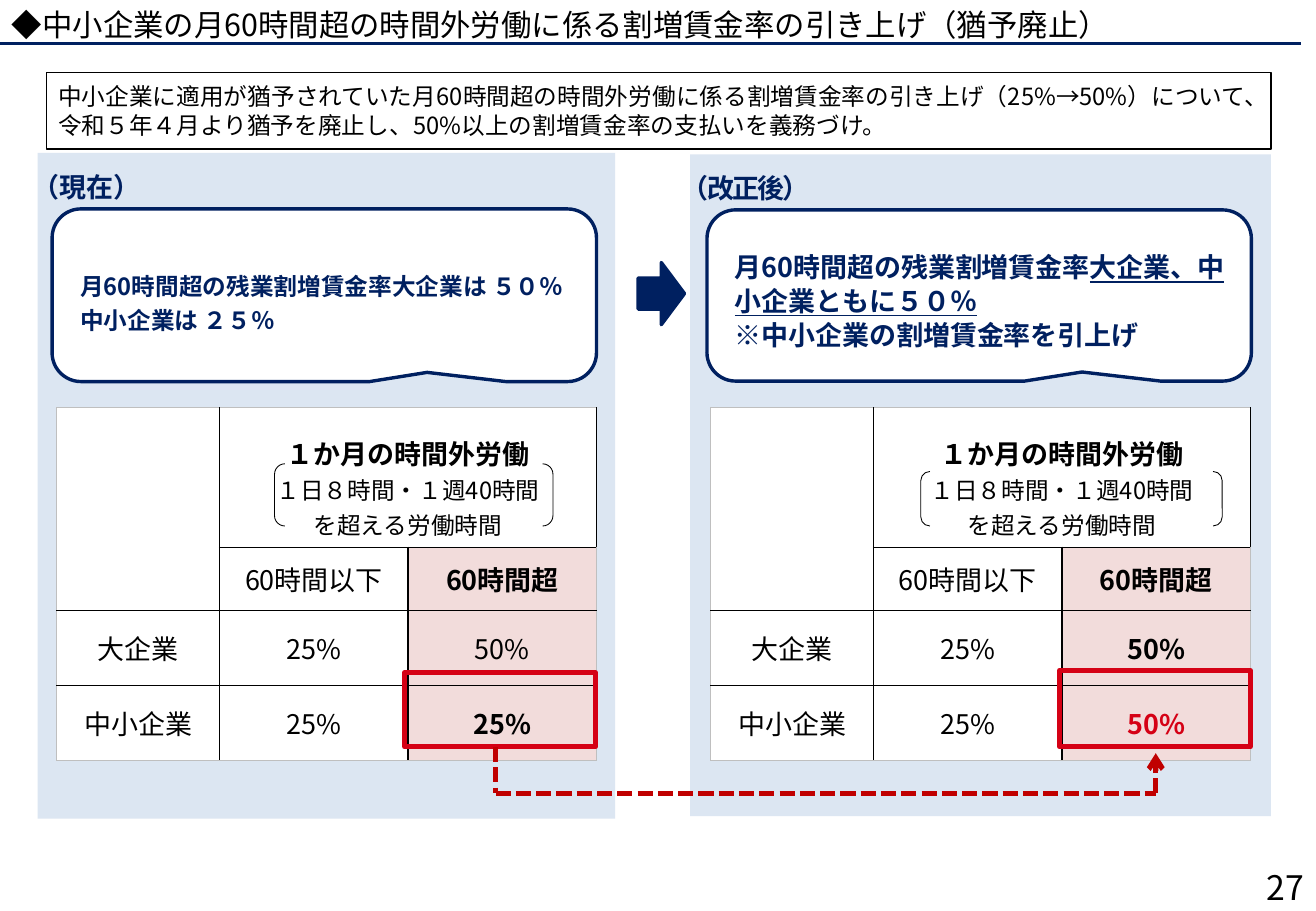
from lxml.etree import SubElement
from pptx import Presentation
from pptx.dml.color import RGBColor
from pptx.enum.dml import MSO_LINE
from pptx.enum.shapes import MSO_CONNECTOR, MSO_SHAPE
from pptx.enum.text import MSO_ANCHOR, PP_ALIGN
from pptx.oxml.ns import qn
from pptx.util import Cm, Pt

FONT = "Noto Sans CJK JP"
NAVY, BLACK, WHITE = "002060", "000000", "FFFFFF"
PANEL, PINK, RED, DARK_RED, GREY = "DCE6F2", "F2DCDB", "D50115", "C00000", "BFBFBF"


def color(value):
    return RGBColor.from_string(value)


def add_text(paragraph, text, size=16, hue=BLACK, bold=False, underline=False, spacing=None):
    run = paragraph.add_run()
    run.text = text
    font = run.font
    font.name, font.size, font.bold, font.underline = FONT, Pt(size), bold, underline
    font.color.rgb = color(hue)
    SubElement(run._r.get_or_add_rPr(), qn("a:ea"), typeface=FONT)
    if spacing is not None:
        run._r.get_or_add_rPr().set("spc", str(spacing))


def fill_frame(frame, lines, align=PP_ALIGN.LEFT, line_spacing=None, anchor=MSO_ANCHOR.TOP,
               insets=(0.25, 0.13, 0.25, 0.13), wrap=True, **style):
    """Each line is a list of (text, format) runs."""
    frame.word_wrap = wrap
    frame.vertical_anchor = anchor
    (frame.margin_left, frame.margin_top,
     frame.margin_right, frame.margin_bottom) = map(Cm, insets)
    for index, line in enumerate(lines):
        paragraph = frame.paragraphs[0] if index == 0 else frame.add_paragraph()
        paragraph.alignment = align
        paragraph.line_spacing = line_spacing
        for text, extra in line:
            add_text(paragraph, text, **{**style, **extra})


class SlideBuilder:
    def __init__(self, slide):
        self.slide = slide
        self.shapes = slide.shapes

    def shape(self, kind, box, fill=None, line=None, width=1, adjustments=()):
        shape = self.shapes.add_shape(kind, *map(Cm, box))
        shape.shadow.inherit = False
        for index, value in enumerate(adjustments):
            shape.adjustments[index] = value
        if fill:
            shape.fill.solid()
            shape.fill.fore_color.rgb = color(fill)
        else:
            shape.fill.background()
        if line:
            shape.line.color.rgb = color(line)
            shape.line.width = Pt(width)
        else:
            shape.line.fill.background()
        return shape

    def text(self, box, lines, **style):
        fill_frame(self.shapes.add_textbox(*map(Cm, box)).text_frame, lines, **style)

    def callout(self, box, lines, **style):
        shape = self.shape(MSO_SHAPE.ROUNDED_RECTANGULAR_CALLOUT, box, WHITE, NAVY, 2,
                           (0.189, 0.447, 0.167))
        fill_frame(shape.text_frame, lines, line_spacing=Pt(20), anchor=MSO_ANCHOR.MIDDLE,
                   insets=(0.41, 0.2, 0.25, 0), hue=NAVY, bold=True, **style)

    def line(self, start, end, hue, width, dashed=False, arrow=False):
        connector = self.shapes.add_connector(MSO_CONNECTOR.STRAIGHT, *map(Cm, start + end))
        connector.line.color.rgb = color(hue)
        connector.line.width = Pt(width)
        if dashed:
            connector.line.dash_style = MSO_LINE.SQUARE_DOT
        if arrow:
            SubElement(connector.line._get_or_add_ln(), qn("a:tailEnd"), type="arrow")
        SubElement(connector._element.spPr, qn("a:effectLst"))

    def border(self, cell, row, column):
        edges = {"lnL": column == 0, "lnR": column == 2, "lnT": row == 0, "lnB": row == 3}
        for tag, outer in edges.items():
            line = SubElement(cell._tc.get_or_add_tcPr(), qn("a:" + tag),
                              w=str(Pt(0.75 if outer else 1)))
            fill = SubElement(line, qn("a:solidFill"))
            SubElement(fill, qn("a:srgbClr"), val=GREY if outer else BLACK)

    def rate_table(self, left, top, rows):
        widths, heights = (3.4, 3.94, 3.94), (2.64, 1.32, 1.57, 1.57)
        table = self.shapes.add_table(4, 3, Cm(left), Cm(top), Cm(sum(widths)),
                                      Cm(sum(heights))).table
        table.first_row = table.horz_banding = False
        for column, width in zip(table.columns, widths):
            column.width = Cm(width)
        for row, height in zip(table.rows, heights):
            row.height = Cm(height)
        table.cell(0, 0).merge(table.cell(1, 0))
        table.cell(0, 1).merge(table.cell(0, 2))
        for r, row in enumerate(rows):
            for c, lines in enumerate(row):
                cell = table.cell(r, c)
                self.border(cell, r, c)
                cell.fill.solid()
                cell.fill.fore_color.rgb = color(PINK if r and c == 2 else WHITE)
                cell.vertical_anchor = MSO_ANCHOR.MIDDLE
                fill_frame(cell.text_frame, lines, align=PP_ALIGN.CENTER,
                           anchor=MSO_ANCHOR.MIDDLE, insets=(0.18, 0.2, 0.18, 0.1))
        table.cell(0, 1).text_frame.paragraphs[0].line_spacing = 1.5


def rate_rows(large_rate, small_rate):
    """Table contents; only the two rates above 60 hours differ."""
    bold, small = {"bold": True}, {"size": 14}
    header = [[("１か月の時間外労働", bold)], [("１日８時間・１週40時間", small)],
              [("を超える労働時間", small)]]
    return [
        [[], header, []],
        [[], [[("60時間以下", {})]], [[("60時間超", bold)]]],
        [[[("大企業", {})]], [[("25%", {})]], [[large_rate]]],
        [[[("中小企業", {})]], [[("25%", {})]], [[small_rate]]],
    ]


def main():
    presentation = Presentation()
    presentation.slide_width, presentation.slide_height = Cm(27.51), Cm(19.05)
    builder = SlideBuilder(presentation.slides.add_slide(presentation.slide_layouts[6]))

    # Panels and rate tables
    builder.shape(MSO_SHAPE.RECTANGLE, (0.79, 3.2, 12.07, 13.92), PANEL)
    builder.rate_table(1.19, 8.53, rate_rows(("50%", {}), ("25%", {"bold": True})))
    builder.shape(MSO_SHAPE.RECTANGLE, (14.43, 3.23, 12.14, 13.84), PANEL)
    builder.rate_table(14.86, 8.53, rate_rows(("50%", {"bold": True}),
                                              ("50%", {"bold": True, "hue": RED})))

    # Panel labels and the arrow between them
    builder.text((0.43, 3.43, 2.79, 0.94), [[("（現在）", {})]], wrap=False, hue=NAVY, bold=True)
    builder.text((14, 3.45, 3.18, 0.94), [[("（改正後）", {})]], align=PP_ALIGN.CENTER,
                 wrap=False, hue=NAVY, bold=True, spacing=-100)
    builder.shape(MSO_SHAPE.RIGHT_ARROW, (13.34, 5.49, 0.97, 1.3), NAVY, NAVY, 2)

    # Callouts
    builder.callout((1.09, 4.37, 11.38, 3.61),
                    [[("月60時間超の残業割増賃金率大企業は ５０％", {})],
                     [("中小企業は ２５％", {})]], size=14)
    builder.callout((14.78, 4.39, 11.38, 3.58),
                    [[("月60時間超の残業割増賃金率", {}),
                      ("大企業、中小企業ともに５０％", {"underline": True})],
                     [("※中小企業の割増賃金率を引上げ", {})]])

    # Brackets and red frames on the tables
    for box in ((5.74, 9.7, 5.82, 1.3), (19.25, 9.86, 6.3, 1.14)):
        builder.shape(MSO_SHAPE.DOUBLE_BRACKET, box, line=BLACK, width=0.5)
    for box in ((8.46, 14.07, 3.99, 1.55), (22.15, 14.02, 3.99, 1.6)):
        builder.shape(MSO_SHAPE.RECTANGLE, box, line=RED, width=3)

    # Dashed route from the old rate to the new one
    route = [(10.36, 15.62), (10.36, 16.59), (24.16, 16.59), (24.16, 15.75)]
    for start, end in zip(route, route[1:]):
        builder.line(start, end, DARK_RED, 3, dashed=True, arrow=end == route[-1])

    # Title, summary and page number
    builder.text((0, 0, 27.28, 1.02),
                 [[("◆中小企業の月60時間超の時間外労働に係る割増賃金率の引き上げ（猶予廃止）", {})]],
                 anchor=MSO_ANCHOR.MIDDLE, size=18)
    builder.line((0, 0.91), (27.2, 0.91), NAVY, 2.25)
    summary = builder.shape(MSO_SHAPE.RECTANGLE, (0.97, 1.52, 25.6, 1.6), line=BLACK)
    fill_frame(summary.text_frame,
               [[("中小企業に適用が猶予されていた月60時間超の時間外労働に係る割増賃金率の引き上げ"
                  "（25%→50%）について、令和５年４月より猶予を廃止し、"
                  "50%以上の割増賃金率の支払いを義務づけ。", {})]],
               insets=(0.25, 0.2, 0.25, 0.2), size=14)
    builder.text((25.5, 18.03, 2.01, 1.02), [[("27", {})]], align=PP_ALIGN.RIGHT,
                 anchor=MSO_ANCHOR.MIDDLE, size=20)

    presentation.save("out.pptx")


if __name__ == "__main__":
    main()
